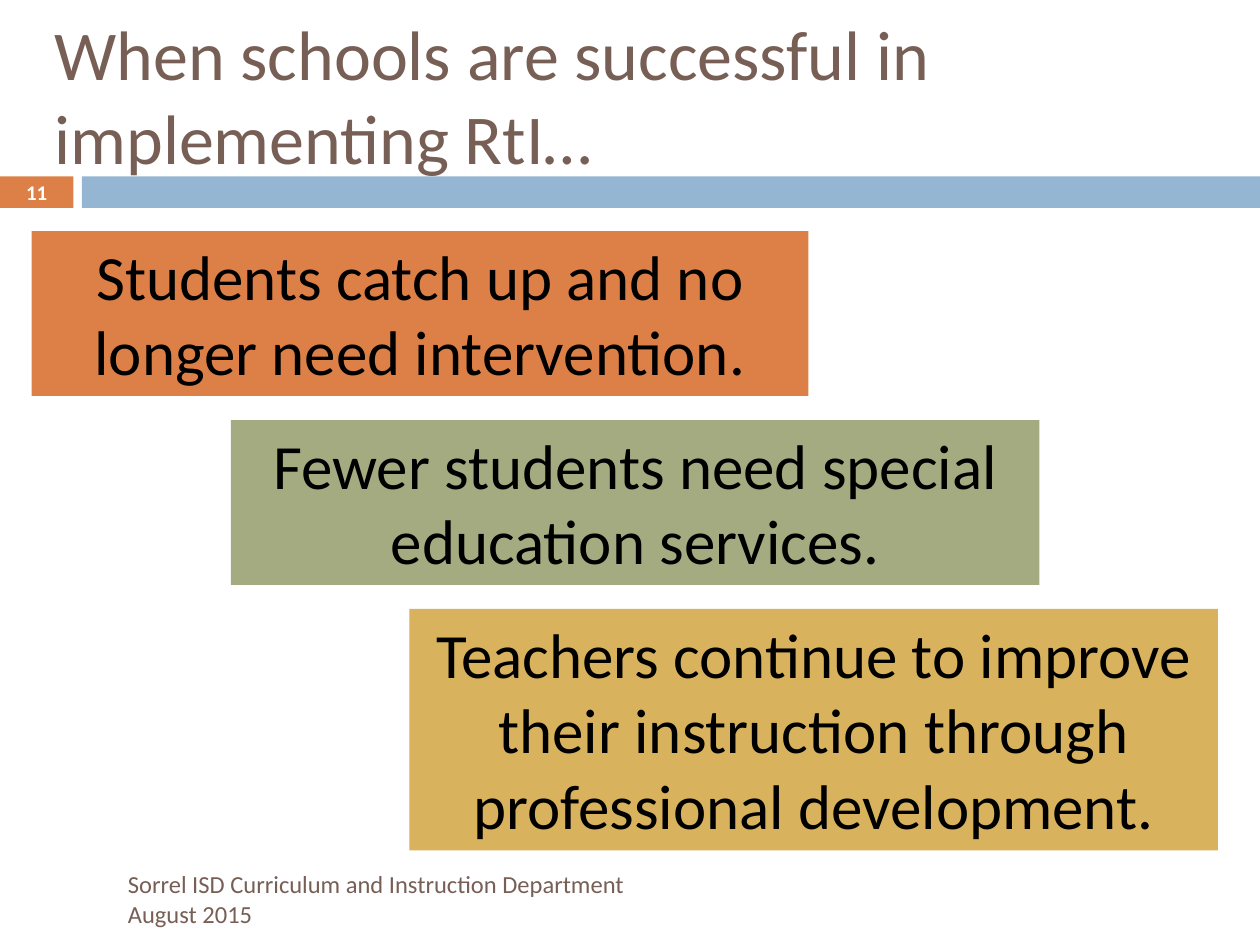
from dataclasses import dataclass
from typing import Any

from pptx import Presentation
from pptx import util as u
from pptx.dml.color import RGBColor
from pptx.enum import shapes, text

ORANGE = RGBColor(0xDD, 0x80, 0x47)
BLUE = RGBColor(0x94, 0xB6, 0xD2)
GREEN = RGBColor(0xA5, 0xAB, 0x81)
GOLD = RGBColor(0xD8, 0xB2, 0x5C)
BROWN = RGBColor(0x77, 0x5F, 0x55)
BLACK = RGBColor(0, 0, 0)
WHITE = RGBColor(0xFF, 0xFF, 0xFF)

COLUMNS, ROWS = 120, 90
LEFT, CENTER = text.PP_ALIGN.LEFT, text.PP_ALIGN.CENTER


@dataclass
class Deck:
    prs: Any
    slide: Any
    font: str = "Calibri"

    def place(self, column, row, columns, rows):
        cell_width = self.prs.slide_width / COLUMNS
        cell_height = self.prs.slide_height / ROWS
        return (round(column * cell_width), round(row * cell_height),
                round(columns * cell_width), round(rows * cell_height))

    def set_words(self, frame, words, size, color, align, bold=False):
        frame.word_wrap = True
        frame.text = words
        for paragraph in frame.paragraphs:
            paragraph.alignment = align
            for run in paragraph.runs:
                run.font.name = self.font
                run.font.size = u.Pt(size)
                run.font.bold = bold
                run.font.color.rgb = color

    def bar(self, area, color):
        block = self.slide.shapes.add_shape(
            shapes.MSO_SHAPE.RECTANGLE, *self.place(*area))
        block.shadow.inherit = False
        block.fill.solid()
        block.fill.fore_color.rgb = color
        block.line.fill.background()
        return block

    def outcome(self, area, color, words):
        frame = self.bar(area, color).text_frame
        self.set_words(frame, words, 36, BLACK, CENTER)
        frame.vertical_anchor = text.MSO_ANCHOR.TOP
        frame.auto_size = text.MSO_AUTO_SIZE.SHAPE_TO_FIT_TEXT

    def label(self, area, words, size, color, align=LEFT, bold=False):
        frame = self.slide.shapes.add_textbox(*self.place(*area)).text_frame
        self.set_words(frame, words, size, color, align, bold)
        frame.vertical_anchor = text.MSO_ANCHOR.MIDDLE
        if align == CENTER:
            frame.margin_left = frame.margin_right = 0


def main():
    prs = Presentation()
    prs.slide_width, prs.slide_height = u.Inches(10), u.Inches(7.5)
    deck = Deck(prs, prs.slides.add_slide(prs.slide_layouts[6]))

    band_row, band_rows, marker_columns, band_column = 16.8, 3, 7, 7.8
    deck.bar((0, band_row, marker_columns, band_rows), ORANGE)
    deck.bar((band_column, band_row, COLUMNS - band_column, band_rows), BLUE)

    deck.label((4, 2, 114, 14),
               "When schools are successful in implementing RtI…", 40, BROWN)

    outcomes = [
        (3, 74, 15.7, ORANGE,
         "Students catch up and no longer need intervention."),
        (22, 77, 15.7, GREEN,
         "Fewer students need special education services."),
        (39, 77, 23, GOLD,
         "Teachers continue to improve their instruction through "
         "professional development."),
    ]
    first_row, row_step = 22, 18
    for step, (column, columns, rows, color, words) in enumerate(outcomes):
        row = first_row + step * row_step
        deck.outcome((column, row, columns, rows), color, words)

    deck.label((0, band_row, marker_columns, band_rows),
               "11", 11.9, WHITE, CENTER, bold=True)
    deck.label((11, 83.2, 100, 4.8),
               "Sorrel ISD Curriculum and Instruction Department\vAugust 2015",
               14, BROWN)

    prs.save("out.pptx")


if __name__ == "__main__":
    main()
